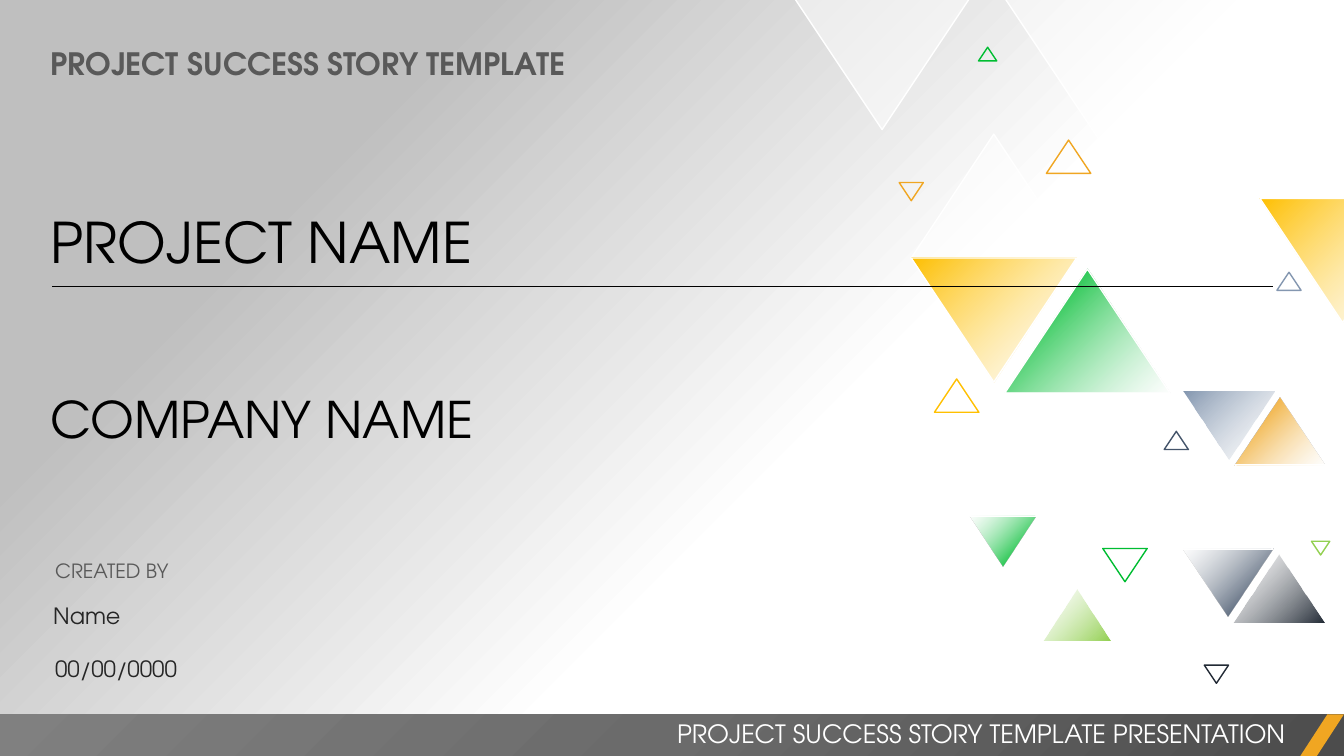
from dataclasses import dataclass
from typing import Optional

from lxml import etree
from pptx import Presentation
from pptx.dml.color import RGBColor
from pptx.enum import shapes, text
from pptx.oxml import ns
from pptx.util import Cm, Pt

FONT = "TeX Gyre Adventor"
WHITE, BLACK, GREY, INK = "FFFFFF", "000000", "595959", "262626"
GOLD, ORANGE, GREEN, LIME = "FFC000", "F0A622", "00BD32", "92D050"
STEEL, SLATE, NAVY = "8497B0", "44546A", "222A35"


@dataclass
class Stop:
    position: int
    colour: str
    alpha: int = 100


@dataclass
class Triangle:
    left: float
    top: float
    width: float
    flipped: bool = False
    fill: Optional[list[Stop]] = None
    outline: Optional[str] = None


@dataclass
class Label:
    wording: str
    left: float
    top: float
    width: float
    height: float
    size: int
    colour: str
    bold: bool = False
    after: int = 0
    align: text.PP_ALIGN = text.PP_ALIGN.LEFT


def rgb(colour: str) -> RGBColor:
    return RGBColor.from_string(colour)


def add_element(parent, tag: str, **attributes):
    values = {key: str(value) for key, value in attributes.items()}
    return etree.SubElement(parent, ns.qn(tag), values)


def set_alpha(colour_element, alpha: int) -> None:
    if alpha < 100:
        add_element(colour_element, "a:alpha", val=alpha * 1000)


def paint_gradient(fill, owner, stops: list[Stop], radial: bool = False) -> None:
    fill.gradient()
    gradient = next(owner.iter(ns.qn("a:gradFill")))
    for child in list(gradient):
        gradient.remove(child)
    stop_list = add_element(gradient, "a:gsLst")
    for stop in stops:
        mark = add_element(stop_list, "a:gs", pos=stop.position * 1000)
        set_alpha(add_element(mark, "a:srgbClr", val=stop.colour), stop.alpha)
    if radial:
        focus = add_element(gradient, "a:path", path="circle")
        add_element(focus, "a:fillToRect", l=100000, t=100000)
    else:
        add_element(gradient, "a:lin", ang=225 * 60000, scaled=0)


def add_plain_shape(slide, preset, left: float, top: float, width: float, height: float):
    shape = slide.shapes.add_shape(preset, Cm(left), Cm(top), Cm(width), Cm(height))
    shape.shadow.inherit = False
    shape.line.fill.background()
    return shape


def draw_triangle(slide, item: Triangle) -> None:
    shape = add_plain_shape(slide, shapes.MSO_SHAPE.ISOSCELES_TRIANGLE,
                            item.left, item.top, item.width, item.width * 0.75)
    shape.rotation = 180 if item.flipped else 0
    if item.fill is None:
        shape.fill.background()
    elif len(item.fill) == 1:
        shape.fill.solid()
        shape.fill.fore_color.rgb = rgb(item.fill[0].colour)
        set_alpha(next(shape.element.spPr.iter(ns.qn("a:srgbClr"))), item.fill[0].alpha)
    else:
        paint_gradient(shape.fill, shape.element.spPr, item.fill)
    if item.outline:
        shape.line.color.rgb = rgb(item.outline)
        shape.line.width = Pt(1)


def write_label(box, label: Label) -> None:
    box.left, box.top = Cm(label.left), Cm(label.top)
    box.width, box.height = Cm(label.width), Cm(label.height)
    frame = box.text_frame
    frame.word_wrap = True
    frame.auto_size = text.MSO_AUTO_SIZE.SHAPE_TO_FIT_TEXT
    frame.vertical_anchor = text.MSO_ANCHOR.TOP
    paragraph = frame.paragraphs[0]
    paragraph.alignment = label.align
    paragraph.space_after = Pt(label.after)
    run = paragraph.add_run()
    run.text = label.wording
    run.font.name = FONT
    run.font.size = Pt(label.size)
    run.font.bold = label.bold
    run.font.color.rgb = rgb(label.colour)


def draw_label(slide, label: Label) -> None:
    write_label(slide.shapes.add_textbox(0, 0, Cm(1), Cm(1)), label)


def fade_out(colour: str) -> list[Stop]:
    return [Stop(0, colour), Stop(100, WHITE, 50)]


def fade_in(colour: str) -> list[Stop]:
    return [Stop(0, WHITE, 50), Stop(82, colour)]


VEIL = [Stop(0, WHITE, 50)]

TRIANGLES = [
    Triangle(22.96, 3.38, 4.17, False, VEIL, WHITE),
    Triangle(22.96, 6.5, 4.17, True, fade_out(GOLD), WHITE),
    Triangle(25.32, 6.78, 4.17, False, fade_in(GREEN), WHITE),
    Triangle(25.32, 9.91, 4.17, True, VEIL, WHITE),
    Triangle(25.32, -0.05, 8.53, True, VEIL, WHITE),
    Triangle(31.09, 13.97, 2.29, False, fade_out(NAVY)),
    Triangle(29.79, 13.82, 2.29, True, fade_in(SLATE)),
    Triangle(29.79, 12.12, 2.29, False, VEIL, WHITE),
    Triangle(29.82, 8.13, 2.29, False, VEIL, WHITE),
    Triangle(29.82, 9.86, 2.29, True, fade_out(STEEL)),
    Triangle(31.12, 10.01, 2.29, False, fade_in(ORANGE)),
    Triangle(31.12, 11.71, 2.29, True, VEIL, WHITE),
    Triangle(26.29, 14.86, 1.7, False, fade_out(LIME)),
    Triangle(24.43, 13, 1.7, True, fade_in(GREEN)),
    Triangle(24.43, 11.73, 1.7, False, VEIL, WHITE),
    Triangle(31.75, 1.88, 4.17, False, VEIL, WHITE),
    Triangle(31.75, 5, 4.17, True, fade_out(GOLD), WHITE),
    Triangle(27.79, 13.82, 1.12, True, outline=GREEN),
    Triangle(23.55, 9.55, 1.12, outline=GOLD),
    Triangle(29.34, 10.87, 0.61, outline=SLATE),
    Triangle(30.35, 16.76, 0.61, True, outline=NAVY),
    Triangle(22.66, 4.6, 0.61, True, outline=ORANGE),
    Triangle(32.18, 6.86, 0.61, outline=STEEL),
    Triangle(24.66, 1.19, 0.46, outline=GREEN),
    Triangle(33.05, 13.64, 0.46, True, outline=LIME),
    Triangle(26.37, 3.53, 1.12, outline=ORANGE),
    Triangle(20.02, -0.05, 4.42, True, VEIL, WHITE),
]

PROJECT_NAME = Label("PROJECT NAME", 1.02, 5.11, 31.17, 1.96, 40, BLACK)
FOOTER = Label("PROJECT SUCCESS STORY TEMPLATE PRESENTATION", 13.34, 17.98, 19.3, 1.02,
               18, WHITE, align=text.PP_ALIGN.RIGHT)
LABELS = [
    Label("COMPANY NAME", 1.02, 9.65, 25.68, 1.8, 36, BLACK),
    Label("CREATED BY", 1.14, 13.97, 4.47, 0.86, 14, GREY, after=6),
    Label("PROJECT SUCCESS STORY TEMPLATE", 1.02, 0.99, 23.67, 1.19, 22, GREY, bold=True),
    Label("Name", 1.09, 15.04, 11.02, 0.94, 16, INK, after=6),
    Label("00/00/0000", 1.14, 16.38, 4.14, 0.94, 16, INK, after=6),
]


def main() -> None:
    deck = Presentation()
    deck.slide_width, deck.slide_height = Cm(33.87), Cm(19.05)
    slide = deck.slides.add_slide(deck.slide_layouts[5])
    paint_gradient(slide.background.fill, slide.element,
                   [Stop(40, WHITE), Stop(77, "BFBFBF")], radial=True)
    write_label(slide.shapes.title, PROJECT_NAME)
    for triangle in TRIANGLES:
        draw_triangle(slide, triangle)
    for label in LABELS:
        draw_label(slide, label)

    name_rule = slide.shapes.add_connector(
        shapes.MSO_CONNECTOR.STRAIGHT, Cm(1.32), Cm(7.22), Cm(32.08), Cm(7.22))
    name_rule.line.color.rgb = rgb(BLACK)
    name_rule.line.width = Pt(0.5)
    add_element(name_rule._element.spPr, "a:effectLst")

    footer_bar = add_plain_shape(slide, shapes.MSO_SHAPE.RECTANGLE, 0, 18, 33.87, 1.05)
    paint_gradient(footer_bar.fill, footer_bar.element.spPr,
                   [Stop(0, "4C4C4C"), Stop(50, "6B6B6B"), Stop(100, "808080")], radial=True)
    footer_accent = add_plain_shape(slide, shapes.MSO_SHAPE.PARALLELOGRAM, 32.77, 18, 1.1, 1.05)
    footer_accent.adjustments[0] = 0.65
    footer_accent.fill.solid()
    footer_accent.fill.fore_color.rgb = rgb(ORANGE)
    draw_label(slide, FOOTER)
    deck.save("out.pptx")


if __name__ == "__main__":
    main()
